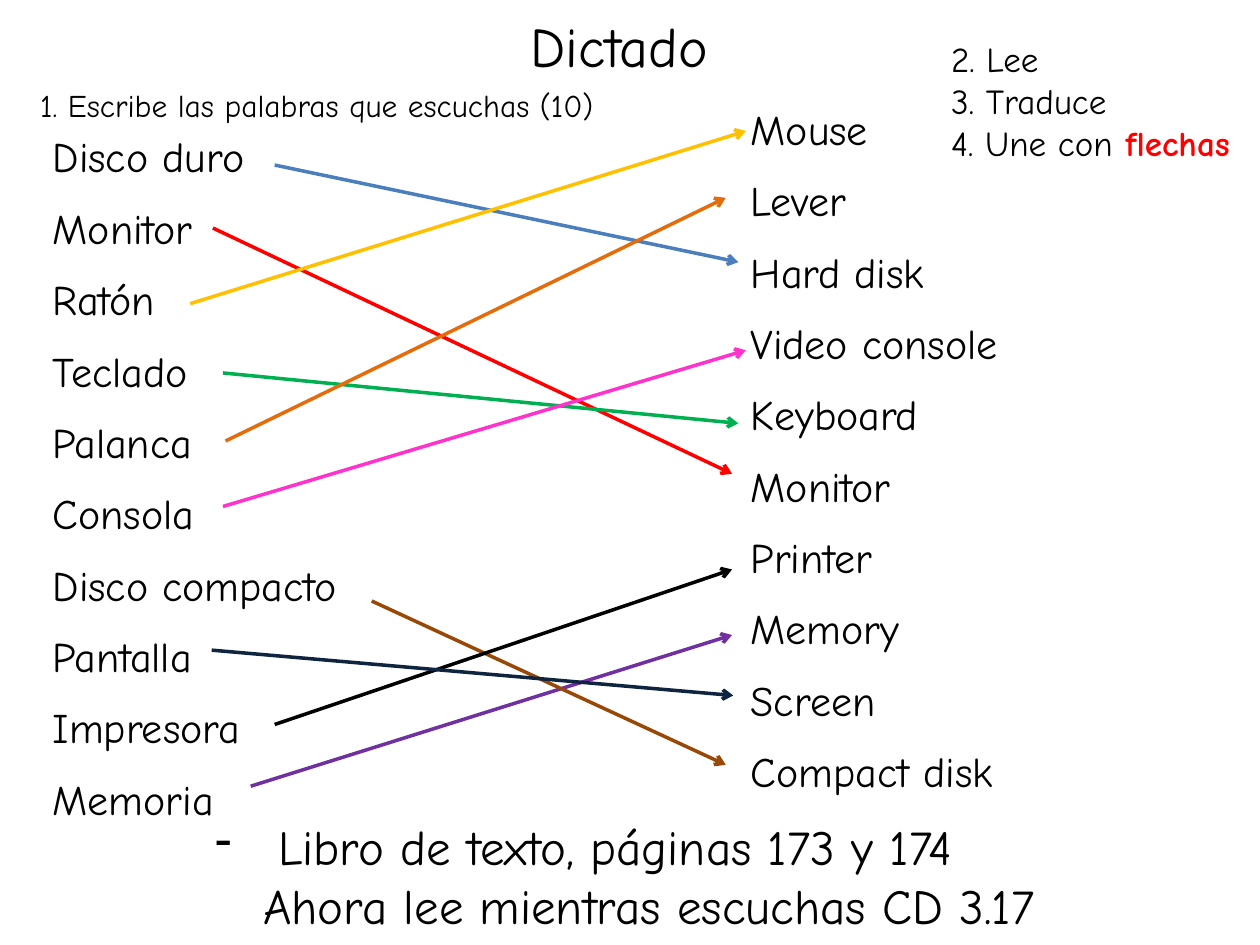
from lxml import etree
from pptx import Presentation
from pptx.dml.color import RGBColor
from pptx.enum.shapes import MSO_CONNECTOR
from pptx.enum.text import MSO_ANCHOR, MSO_AUTO_SIZE, PP_ALIGN
from pptx.oxml.ns import qn
from pptx.util import Inches, Pt

STRAIGHT = MSO_CONNECTOR.STRAIGHT
TOP = MSO_ANCHOR.TOP
NO_AUTOFIT = MSO_AUTO_SIZE.NONE
LEFT = PP_ALIGN.LEFT
TITLE_ONLY = 5
FONT = "Comic Neue"

COLORS = {
    "black": "000000", "red": "FF0000", "blue": "4B7EBC", "yellow": "FFC000",
    "green": "00B050", "purple": "7030A0", "pink": "FF33CC",
    "orange": "E46C0A", "brown": "984807", "navy": "0F243E",
}

SPANISH = ["Disco duro", "Monitor", "Ratón", "Teclado", "Palanca", "Consola",
           "Disco compacto", "Pantalla", "Impresora", "Memoria"]
ENGLISH = ["Mouse", "Lever", "Hard disk", "Video console", "Keyboard",
           "Monitor", "Printer", "Memory", "Screen", "Compact disk"]

ARROWS = [
    ("blue", (2.18, 1.31), (5.86, 2.08)),
    ("red", (1.69, 1.81), (5.81, 3.76)),
    ("yellow", (1.51, 2.41), (5.92, 1.04)),
    ("green", (1.77, 2.96), (5.86, 3.36)),
    ("purple", (1.99, 6.24), (5.81, 5.04)),
    ("pink", (1.77, 4.02), (5.92, 2.78)),
    ("orange", (1.79, 3.5), (5.76, 1.57)),
    ("brown", (2.95, 4.77), (5.76, 6.07)),
    ("black", (2.18, 5.75), (5.81, 4.52)),
    ("navy", (1.68, 5.16), (5.82, 5.52)),
]


def add_run(paragraph, text, size, color="black", bold=False):
    """Append a formatted run to a paragraph."""
    run = paragraph.add_run()
    run.text = text
    formats = {"name": FONT, "size": Pt(size), "bold": bold}
    for name, value in formats.items():
        setattr(run.font, name, value)
    run.font.color.rgb = RGBColor.from_string(COLORS[color])


def fill_lines(shape, lines, size, space_after=0):
    """Write one left-aligned paragraph per line and return the paragraphs."""
    frame = shape.text_frame
    formats = {"word_wrap": True, "auto_size": NO_AUTOFIT, "vertical_anchor": TOP}
    for name, value in formats.items():
        setattr(frame, name, value)
    for index, line in enumerate(lines):
        paragraph = frame.add_paragraph() if index else frame.paragraphs[0]
        paragraph.alignment = LEFT
        paragraph.space_after = Pt(space_after)
        add_run(paragraph, line, size)
    return list(frame.paragraphs)


def add_title(slide, text, box):
    """Place and fill the title placeholder."""
    title = slide.shapes.title
    for name, value in zip(("left", "top", "width", "height"), box):
        setattr(title, name, Inches(value))
    fill_lines(title, [text], 32)


def add_text(slide, lines, box, size, space_after=0):
    """Add a text box and return its paragraphs."""
    shape = slide.shapes.add_textbox(*map(Inches, box))
    return fill_lines(shape, lines, size, space_after)


def indent(paragraph, margin, first=0, bullet=None):
    """Set the left margin, first-line indent and optional bullet."""
    properties = paragraph._p.get_or_add_pPr()
    properties.set("marL", str(Inches(margin)))
    properties.set("indent", str(Inches(first)))
    if bullet:
        etree.SubElement(properties, qn("a:buChar")).set("char", bullet)


def add_arrow(slide, color, start, end):
    """Draw a straight coloured arrow from start to end."""
    arrow = slide.shapes.add_connector(STRAIGHT, *map(Inches, start + end))
    arrow.line.width = Pt(2)
    arrow.line.color.rgb = RGBColor.from_string(COLORS[color])
    line = arrow.line._get_or_add_ln()
    etree.SubElement(line, qn("a:tailEnd")).set("type", "arrow")
    etree.SubElement(arrow._element.spPr, qn("a:effectLst"))


def main():
    """Build the vocabulary matching slide."""
    presentation = Presentation()
    presentation.slide_width = Inches(10)
    presentation.slide_height = Inches(7.5)
    slide = presentation.slides.add_slide(presentation.slide_layouts[TITLE_ONLY])

    add_title(slide, "Dictado", (4.11, 0.04, 1.84, 0.66))
    for paragraph in add_text(slide, SPANISH, (0.01, 0.99, 3.57, 6.5), 24, 12):
        indent(paragraph, 0.31)
    add_text(slide, ENGLISH, (5.86, 0.77, 4.13, 5.65), 24, 12)
    add_text(slide, ["1. Escribe las palabras que escuchas (10)"],
             (0.22, 0.63, 4.93, 0.4), 18)
    for arrow in ARROWS:
        add_arrow(slide, *arrow)

    steps = add_text(slide, ["2. Lee", "3. Traduce", "4. Une con"],
                     (7.45, 0.25, 2.77, 1.41), 20)
    add_run(steps[-1], " flechas", 20, "red", True)

    book, listening = add_text(
        slide,
        ["Libro de texto, páginas 173 y 174", "Ahora lee mientras escuchas CD 3.17"],
        (1.61, 6.43, 7.42, 1.04), 28)
    indent(book, 0.5, -0.5, "-")
    indent(listening, 0.38)

    presentation.save("out.pptx")


if __name__ == "__main__":
    main()
